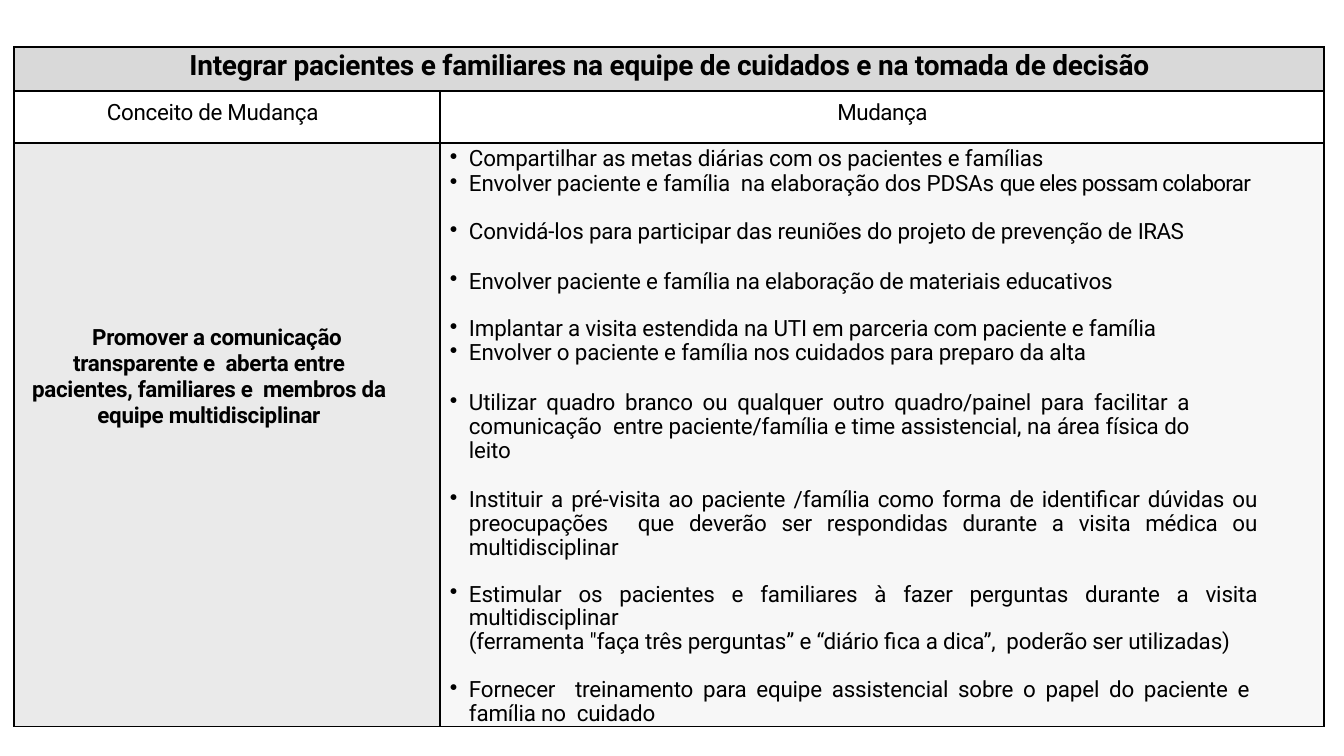
import pptx
import pptx.dml.color
import pptx.enum.text
import pptx.oxml
import pptx.oxml.ns
import pptx.util

EMU_PER_PX = 914400 / 100.8
FONT = "Roboto"
COLORS = {
    "text": "000000",
    "border": "000000",
    "heading": "D9D9D9",
    "columns": "FFFFFF",
    "concept": "EAEAEA",
    "changes": "F7F7F7",
}
ALIGN = pptx.enum.text.PP_ALIGN
COLUMN_WIDTHS = [426, 884]
ROW_HEIGHTS = [44, 52, 583]
CHANGES = [
    ([("Compartilhar as metas diárias com os pacientes e famílias", -0.1)],
     {"align": ALIGN.LEFT}),
    ([("Envolver paciente e família  na elaboração dos PDSAs ", -0.1),
      ("que eles possam colaborar", -0.5)],
     {"align": ALIGN.LEFT, "line": 17.2, "before": 0.6}),
    ([("Convidá-los para participar das reuniões do projeto de prevenção de ", -0.1),
      ("IRAS", -0.4)],
     {"align": ALIGN.LEFT, "line": 16.7, "before": 17.8}),
    ([("Envolver paciente e família na elaboração de materiais educativos", -0.1)],
     {"line": 17, "before": 18.2}),
    ([("Implantar a visita estendida na UTI em parceria com paciente e família", -0.1)],
     {"line": 15.5, "before": 18.5}),
    ([("Envolver o paciente e família nos cuidados para preparo da alta", -0.1)],
     {"line": 17.2}),
    ([("Utilizar quadro branco ou qualquer outro quadro/painel para facilitar a "
       "comunicação  entre paciente/família e time assistencial, na área física do leito",
       -0.1)],
     {"line": 16.9, "before": 18.8, "right": 134}),
    ([("Instituir a pré-visita ao paciente /família como forma de identificar dúvidas ou "
       "preocupações  que deverão ser respondidas durante a visita médica ou "
       "multidisciplinar", -0.1)],
     {"line": 17, "before": 18.6}),
    ([("Estimular os pacientes e familiares à fazer perguntas durante a visita "
       "multidisciplinar", -0.1)],
     {"line": 16.3, "before": 17.1}),
    ([("(ferramenta \"faça três perguntas” e “diário fica a dica”,  poderão ser "
       "utilizadas)", -0.1)],
     {"line": 17.1, "bullet": False, "indent": 0}),
    ([("Fornecer  treinamento para equipe assistencial sobre o papel do paciente e "
       "família no  cuidado", -0.1)],
     {"line": 16.9, "before": 17.9, "right": 74}),
]


def px(length):
    """Convert pixels to EMU."""
    return pptx.util.Emu(round(length * EMU_PER_PX))


def rgb(name):
    """Return the named colour."""
    return pptx.dml.color.RGBColor.from_string(COLORS[name])


def write(paragraph, runs, size=16, bold=False, align=ALIGN.CENTER, left=0, right=0,
          indent=0, line=None, before=0, bullet=False):
    """Fill a paragraph with (text, letter spacing) runs and format it."""
    paragraph.alignment = align
    paragraph.space_before = pptx.util.Pt(before)
    if line:
        paragraph.line_spacing = pptx.util.Pt(line)
    properties = paragraph._p.get_or_add_pPr()
    for name, length in (("marL", left), ("marR", right), ("indent", indent)):
        properties.set(name, str(px(length)))
    if bullet:
        mark = pptx.oxml.parse_xml(
            f'<a:buChar {pptx.oxml.ns.nsdecls("a")} char="•"/>')
        properties.append(mark)
    for text, spacing in runs:
        run = paragraph.add_run()
        run.text = text
        run.font.name = FONT
        run.font.size = pptx.util.Pt(size)
        run.font.bold = bold
        run.font.color.rgb = rgb("text")
        run._r.get_or_add_rPr().set("spc", str(round(spacing * 100)))


def style_cell(cell, fill, top):
    """Set the fill, top margin and black borders of a cell."""
    cell.margin_left = cell.margin_right = cell.margin_bottom = 0
    cell.margin_top = px(top)
    cell.vertical_anchor = pptx.enum.text.MSO_ANCHOR.TOP
    properties = cell._tc.get_or_add_tcPr()
    for side in ("lnL", "lnR", "lnT", "lnB"):
        properties.append(pptx.oxml.parse_xml(
            f'<a:{side} {pptx.oxml.ns.nsdecls("a")} w="{pptx.util.Pt(1)}"><a:solidFill>'
            f'<a:srgbClr val="{COLORS["border"]}"/></a:solidFill></a:{side}>'))
    cell.fill.solid()
    cell.fill.fore_color.rgb = rgb(fill)


def add_change_table(slide):
    """Add the empty table with its row and column sizes."""
    frame = slide.shapes.add_table(len(ROW_HEIGHTS), len(COLUMN_WIDTHS), px(14), px(47),
                                   px(sum(COLUMN_WIDTHS)), px(sum(ROW_HEIGHTS)))
    table = frame.table
    table.first_row = table.horz_banding = False
    for column, width in zip(table.columns, COLUMN_WIDTHS):
        column.width = px(width)
    for row, height in zip(table.rows, ROW_HEIGHTS):
        row.height = px(height)
    rows = [("heading", "heading", 3, 3), ("columns", "columns", 9, 9),
            ("concept", "changes", 182, 3)]
    for row, (left_fill, right_fill, left_top, right_top) in enumerate(rows):
        style_cell(table.cell(row, 0), left_fill, left_top)
        style_cell(table.cell(row, 1), right_fill, right_top)
    table.cell(0, 0).merge(table.cell(0, 1))
    return table


def fill_changes(cell):
    """List the changes in a cell."""
    frame = cell.text_frame
    for number, (runs, layout) in enumerate(CHANGES):
        paragraph = frame.add_paragraph() if number else frame.paragraphs[0]
        defaults = {"align": ALIGN.JUSTIFY, "left": 29, "right": 66, "indent": -19,
                    "bullet": True}
        write(paragraph, runs, **(defaults | layout))


def main():
    """Build the slide and save it."""
    deck = pptx.Presentation()
    deck.slide_width, deck.slide_height = px(1344), px(756)
    slide = deck.slides.add_slide(deck.slide_layouts[6])
    table = add_change_table(slide)
    heading, concept_title, change_title, concept = (
        table.cell(row, column).text_frame.paragraphs[0]
        for row, column in ((0, 0), (1, 0), (1, 1), (2, 0)))
    write(heading, [("Integrar pacientes e familiares na equipe de cuidados e na tomada "
                     "de decisão", -0.2)], size=20, bold=True)
    write(concept_title, [("Conceito de Mudança", -0.2)], align=ALIGN.LEFT, left=93)
    write(change_title, [("Mudança", -0.3)], left=1)
    write(concept, [("Promover a comunicação transparente e  aberta entre pacientes, "
                     "familiares e  membros da equipe multidisciplinar", -0.2)],
          bold=True, left=9, right=45, indent=16)
    fill_changes(table.cell(2, 1))
    deck.save("out.pptx")


if __name__ == "__main__":
    main()
